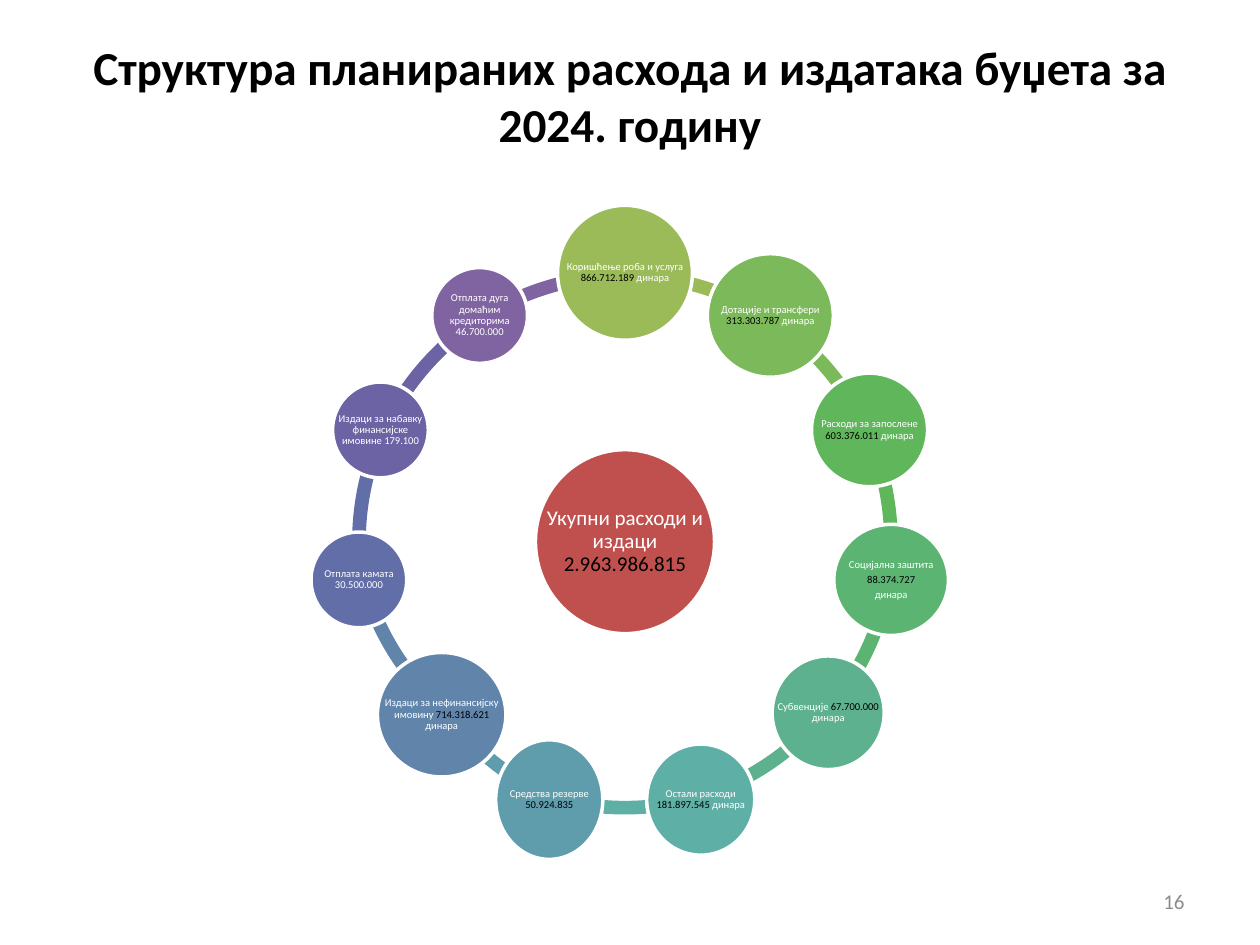
from dataclasses import dataclass
from math import cos, radians, sin

from pptx import Presentation
from pptx.dml.color import RGBColor
from pptx.enum.shapes import MSO_SHAPE
from pptx.enum.text import MSO_ANCHOR, MSO_AUTO_SIZE, PP_ALIGN
from pptx.util import Cm, Pt

ARC, OVAL = MSO_SHAPE.BLOCK_ARC, MSO_SHAPE.OVAL
MIDDLE = MSO_ANCHOR.MIDDLE
CENTER, RIGHT = PP_ALIGN.CENTER, PP_ALIGN.RIGHT


@dataclass
class Theme:
    font: str = "Calibri"
    ink: str = "000000"
    paper: str = "FFFFFF"
    muted: str = "8C8C8C"
    hub: str = "C0504D"
    title: int = 27
    large: int = 12
    small: int = 6


theme = Theme()


def style(run, size, color):
    run.font.name = theme.font
    run.font.size = Pt(size)
    run.font.color.rgb = RGBColor.from_string(color)


def bubble(x, y, wide, high, color, text, size, inset):
    """Draw a circle centred on x, y; a | in text switches between white and black."""
    box = Cm(x - wide / 2), Cm(y - high / 2), Cm(wide), Cm(high)
    disc = slide.shapes.add_shape(OVAL, *box)
    disc.shadow.inherit = False
    disc.fill.solid()
    disc.fill.fore_color.rgb = RGBColor.from_string(color)
    disc.line.color.rgb = RGBColor.from_string(theme.paper)
    disc.line.width = Pt(2)

    # A separate box lets the text use the full width of the circle.
    frame = slide.shapes.add_textbox(*box).text_frame
    frame.word_wrap = True
    frame.vertical_anchor = MIDDLE
    frame.margin_left = frame.margin_right = Cm(inset)
    frame.margin_top = frame.margin_bottom = Cm(inset)
    for row, line in enumerate(text.split("\n")):
        para = frame.add_paragraph() if row else frame.paragraphs[0]
        para.alignment = CENTER
        para.line_spacing = 0.9
        para.space_after = Pt(0.35 * size)
        for i, part in enumerate(line.split("|")):
            if part:
                run = para.add_run()
                run.text = part
                style(run, size, theme.ink if i % 2 else theme.paper)


# Text, colour, width, height, in clockwise order from the top
items = [
    ("Коришћење роба и услуга |866.712.189 |динара", "9BBB59", 2.72, 2.72),
    ("Дотације и трансфери |313.303.787 |динара", "7CB95A", 2.54, 2.49),
    ("Расходи за запослене |603.376.011 |динара", "5FB65B", 2.34, 2.29),
    ("Социјална заштита\n|88.374.727\nдинара", "5CB473", 2.31, 2.24),
    ("Субвенције |67.700.000 |динара", "5DB18E", 2.26, 2.29),
    ("Остали расходи |181.897.545 |динара", "5EAFA6", 2.18, 2.24),
    ("Средства резерве |50.924.835", "5F9DAC", 2.16, 2.41),
    ("Издаци за нефинансијску имовину |714.318.621 |динара", "6084AA", 2.59, 2.51),
    ("Отплата камата 30.500.000", "626EA7", 1.93, 1.93),
    ("Издаци за набавку финансијске имовине 179.100", "6C63A5", 1.93, 1.93),
    ("Отплата дуга домаћим кредиторима 46.700.000", "8064A2", 1.93, 1.93),
]
# Hand-placed exceptions to the even ring: circles (dx, dy)
# and arcs (dx, dy, start, end), with angles in degrees
moved = {4: (0, -0.1), 7: (0.4, -0.06)}
bent = {
    3: (0.03, -0.1, 9.4, 41.31),
    4: (-0.1, 0.03, 39.29, 72.46),
    6: (0.69, 0.25, 114.01, 143.33),
    7: (-0.1, -0.61, 130.83, 165.18),
}
mid_x, mid_y = 12.6, 10.92
radius, span = 5.42, 11
step = 360 / len(items)

deck = Presentation()
deck.slide_width, deck.slide_height = Cm(25.4), Cm(19.05)
slide = deck.slides.add_slide(deck.slide_layouts[5])

title = slide.shapes.title
title.left, title.top, title.width, title.height = Cm(1.27), Cm(0.74), Cm(22.86), Cm(2.36)
title.text_frame.text = "Структура планираних расхода и издатака буџета за 2024. годину"
title.text_frame.auto_size = MSO_AUTO_SIZE.NONE
title.text_frame.vertical_anchor = MIDDLE
head = title.text_frame.paragraphs[0]
head.alignment = CENTER
head.runs[0].font.bold = True
style(head.runs[0], theme.title, theme.ink)

# Ring
for i, (text, color, wide, high) in enumerate(items):
    even = (0, 0, 270 + i * step, 270 + (i + 1) * step)
    dx, dy, start, end = bent.get(i, even)
    left, top = mid_x + dx - span / 2, mid_y + dy - span / 2
    arc = slide.shapes.add_shape(ARC, Cm(left), Cm(top), Cm(span), Cm(span))
    # Angles are stored in 1/60000 degree, adjustments in 1/100000
    arc.adjustments[0] = start % 360 * 0.6
    arc.adjustments[1] = end % 360 * 0.6
    arc.adjustments[2] = 0.025
    arc.shadow.inherit = False
    arc.fill.solid()
    arc.fill.fore_color.rgb = RGBColor.from_string(color)
    arc.line.fill.background()

# Circles
total = "Укупни расходи и издаци |2.963.986.815"
bubble(mid_x, mid_y, 3.61, 3.71, theme.hub, total, theme.large, 0.05)
for i, (text, color, wide, high) in enumerate(items):
    turn = radians(270 + i * step)
    dx, dy = moved.get(i, (0, 0))
    x = mid_x + radius * cos(turn) + dx
    y = mid_y + radius * sin(turn) + dy
    bubble(x, y, wide, high, color, text, theme.small, 0.03)

# Page number
page = slide.shapes.add_textbox(Cm(18.2), Cm(17.66), Cm(5.93), Cm(1.01)).text_frame
page.word_wrap = True
page.vertical_anchor = MIDDLE
page.text = "16"
page.paragraphs[0].alignment = RIGHT
style(page.paragraphs[0].runs[0], theme.large, theme.muted)

deck.save("out.pptx")
